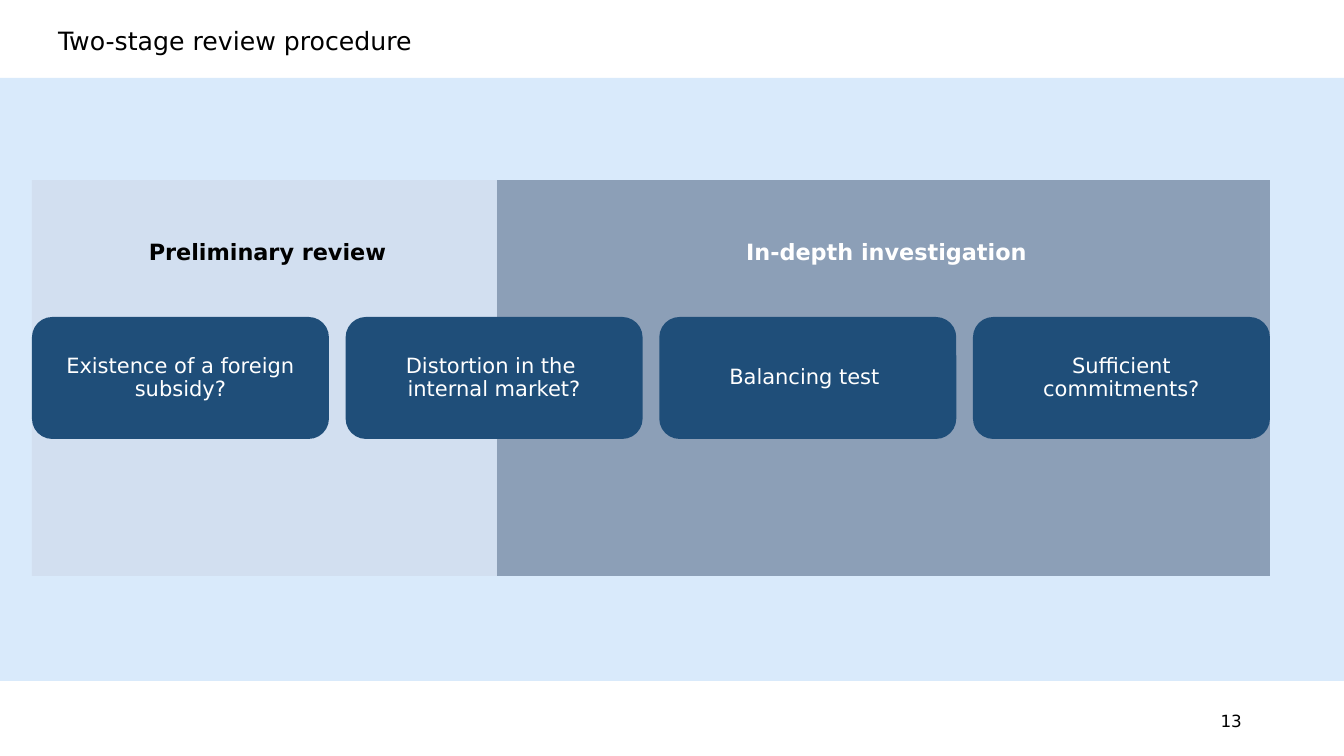
from lxml import etree
from pptx import Presentation
from pptx.dml.color import RGBColor
from pptx.enum.shapes import MSO_SHAPE
from pptx.enum.text import MSO_ANCHOR, MSO_AUTO_SIZE, PP_ALIGN
from pptx.oxml.ns import qn
from pptx.util import Emu, Pt

RECTANGLE, ROUNDED = MSO_SHAPE.RECTANGLE, MSO_SHAPE.ROUNDED_RECTANGLE
TOP, MIDDLE = MSO_ANCHOR.TOP, MSO_ANCHOR.MIDDLE
LEFT, CENTER, RIGHT = PP_ALIGN.LEFT, PP_ALIGN.CENTER, PP_ALIGN.RIGHT

TITLE = "Two-stage review procedure"
PAGE_NUMBER = "13"
# heading, left, right, fill, text colour
PHASES = [
    ("In-depth investigation", 497, 1270, "slate", "white"),
    ("Preliminary review", 32, 497, "pale", "black"),
]
STEPS = [
    "Existence of a foreign subsidy?",
    "Distortion in the \vinternal market?",
    "Balancing test ",
    "Sufficient commitments?",
]
COLOURS = {
    "band": "D9EAFB", "slate": "8497B0", "pale": "D2DEEF",
    "navy": "1F4E79", "white": "FFFFFF", "black": "000000",
}
FONT = "DejaVu Sans"
EMU_PER_PX = 914400 / 100.8
SLIDE_WIDTH, SLIDE_HEIGHT = 1344, 756
FLOW_LEFT, FLOW_RIGHT = 32, 1270
PHASE_TOP, PHASE_HEIGHT = 180, 396
STEP_TOP, STEP_WIDTH, STEP_HEIGHT = 317, 297, 122
PHASE_INSETS = (18, 61, 12, 13)
STEP_INSETS = (18, 13, 18, 13)


def px(length):
    return Emu(round(length * EMU_PER_PX))


def colour(name):
    return RGBColor.from_string(COLOURS[name])


def write(box, text, size, ink, align=LEFT, anchor=TOP, insets=(10, 5, 10, 5),
          bold=False, spacing=0.9):
    frame = box.text_frame
    frame.text = text
    margins = dict(zip(("margin_left", "margin_top", "margin_right", "margin_bottom"),
                       map(px, insets)))
    layout = {"word_wrap": True, "auto_size": MSO_AUTO_SIZE.NONE,
              "vertical_anchor": anchor, **margins}
    for name, value in layout.items():
        setattr(frame, name, value)
    para = frame.paragraphs[0]
    para.alignment, para.line_spacing = align, spacing
    for span in para.runs:
        for name, value in {"name": FONT, "size": Pt(size), "bold": bold}.items():
            setattr(span.font, name, value)
        span.font.color.rgb = colour(ink)


def add_block(slide, kind, left, top, width, height, fill, opacity=100):
    block = slide.shapes.add_shape(kind, *map(px, (left, top, width, height)))
    block.shadow.inherit = False
    block.fill.solid()
    block.fill.fore_color.rgb = colour(fill)
    block.line.fill.background()
    if opacity < 100:
        tint = block.fill._xPr.find(".//" + qn("a:srgbClr"))
        etree.SubElement(tint, qn("a:alpha"), val=str(opacity * 1000))
    return block


def main():
    deck = Presentation()
    deck.slide_width, deck.slide_height = px(SLIDE_WIDTH), px(SLIDE_HEIGHT)
    slide = deck.slides.add_slide(deck.slide_layouts[5])

    add_block(slide, RECTANGLE, 0, 78, SLIDE_WIDTH, 603, "band")

    title = slide.shapes.title
    title.left, title.top, title.width, title.height = map(px, (48, 24, 1230, 44))
    write(title, TITLE, 18, "black")

    for heading, left, right, fill, ink in PHASES:
        panel = add_block(slide, RECTANGLE, left, PHASE_TOP, right - left,
                          PHASE_HEIGHT, fill, opacity=90)
        write(panel, heading, 16, ink, CENTER, TOP, PHASE_INSETS, bold=True)

    pitch = (FLOW_RIGHT - FLOW_LEFT - STEP_WIDTH) / (len(STEPS) - 1)
    for index, question in enumerate(STEPS):
        step = add_block(slide, ROUNDED, FLOW_LEFT + index * pitch, STEP_TOP,
                         STEP_WIDTH, STEP_HEIGHT, "navy")
        write(step, question, 15, "white", CENTER, MIDDLE, STEP_INSETS)

    number = slide.shapes.add_textbox(*map(px, (950, 701, 302, 40)))
    write(number, PAGE_NUMBER, 12, "black", RIGHT, MIDDLE, spacing=1.0)

    deck.save("out.pptx")


if __name__ == "__main__":
    main()
